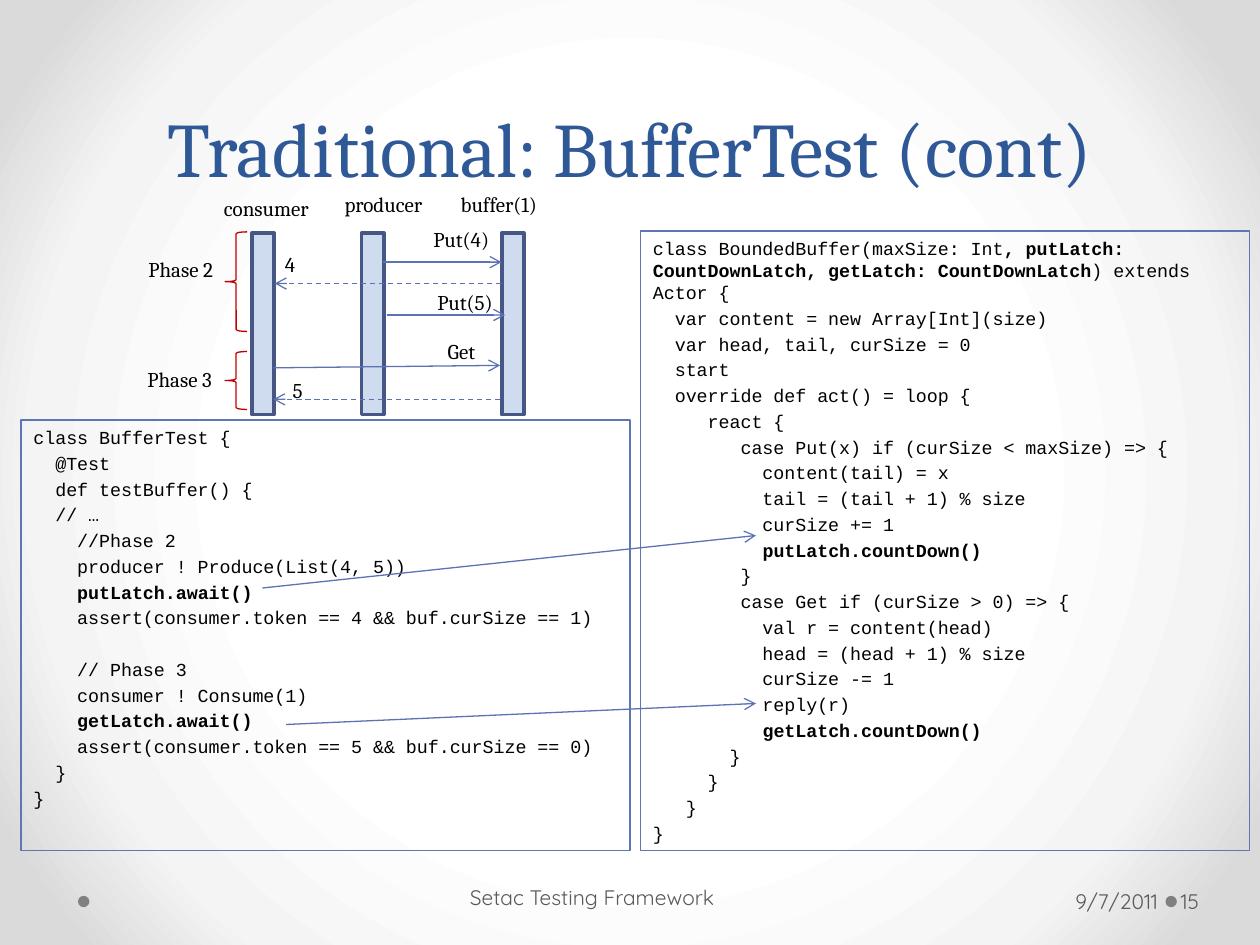
from lxml import etree
from pptx import Presentation
from pptx.dml.color import RGBColor
from pptx.enum import dml, shapes, text
from pptx.oxml import ns
from pptx.util import Pt

SERIF, MONO, SANS = "Cambria", "Courier New", "Quicksand"
BLUE, ARROW, GREY = "6076B4", "5C72B2", "595959"
LEFT, CENTER, RIGHT = text.PP_ALIGN.LEFT, text.PP_ALIGN.CENTER, text.PP_ALIGN.RIGHT

# Text between ** marks is bold
TEST_CODE = """class BufferTest {
  @Test
  def testBuffer() {
  // …
    //Phase 2
    producer ! Produce(List(4, 5))
    **putLatch.await()**
    assert(consumer.token == 4 && buf.curSize == 1)

    // Phase 3
    consumer ! Consume(1)
    **getLatch.await()**
    assert(consumer.token == 5 && buf.curSize == 0)
  }
}"""
BUFFER_CODE = """class BoundedBuffer(maxSize: Int**, putLatch: CountDownLatch, getLatch: CountDownLatch**) extends Actor {
  var content = new Array[Int](size)
  var head, tail, curSize = 0
  start
  override def act() = loop {
     react {
        case Put(x) if (curSize < maxSize) => {
          content(tail) = x
          tail = (tail + 1) % size
          curSize += 1
          **putLatch.countDown()**
        }
        case Get if (curSize > 0) => {
          val r = content(head)
          head = (head + 1) % size
          curSize -= 1
          reply(r)
          **getLatch.countDown()**
       }
     }
   }
}"""


def color(value):
    return RGBColor.from_string(value)


def add_xml(parent, tag, **attributes):
    return etree.SubElement(parent, ns.qn(tag), attributes)


def add_shape(slide, kind, box, fill=None, line=None, width=0.75):
    shape = slide.shapes.add_shape(kind, *map(Pt, box))
    shape.shadow.inherit = False
    if fill:
        shape.fill.solid()
        shape.fill.fore_color.rgb = color(fill)
    else:
        shape.fill.background()
    if line:
        shape.line.color.rgb = color(line)
        shape.line.width = Pt(width)
    else:
        shape.line.fill.background()
    return shape


def write(frame, content, font=SERIF, size=12, fill="000000", align=LEFT,
          anchor=text.MSO_ANCHOR.TOP, before=0, line_spacing=None):
    """Write one paragraph per line; an empty line widens the next gap."""
    frame.word_wrap = True
    frame.vertical_anchor = anchor
    paragraph, gap = None, 0
    for line in content.split("\n"):
        if not line:
            gap += before + line_spacing
            continue
        if paragraph is None:
            paragraph = frame.paragraphs[0]
        else:
            paragraph = frame.add_paragraph()
            paragraph.space_before = Pt(before + gap)
        gap = 0
        paragraph.alignment = align
        if line_spacing:
            paragraph.line_spacing = Pt(line_spacing)
        for index, part in enumerate(line.split("**")):
            if part:
                run = paragraph.add_run()
                run.text = part
                run.font.name, run.font.size = font, Pt(size)
                run.font.bold = index % 2 == 1
                run.font.color.rgb = color(fill)


def add_text(slide, box, content, **style):
    frame = slide.shapes.add_textbox(*map(Pt, box)).text_frame
    write(frame, content, **style)
    return frame


def add_arrow(slide, start, end, dashed=False):
    line = slide.shapes.add_connector(
        shapes.MSO_CONNECTOR.STRAIGHT, *map(Pt, (*start, *end)))
    line.line.color.rgb = color(ARROW)
    line.line.width = Pt(0.75)
    if dashed:
        line.line.dash_style = dml.MSO_LINE.DASH
    add_xml(line.line._get_or_add_ln(), "a:tailEnd", type="arrow")
    add_xml(line._element.spPr, "a:effectLst")


def paint_background(slide):
    slide.background.fill.gradient()
    gradient = slide.element.find(".//" + ns.qn("a:gradFill"))
    for child in list(gradient):
        gradient.remove(child)
    stops = add_xml(gradient, "a:gsLst")
    for position, value in ((50, "FFFFFF"), (76, "F4F4F4"), (92, "DADADA")):
        stop = add_xml(stops, "a:gs", pos=str(position * 1000))
        add_xml(stop, "a:srgbClr", val=value)
    circle = add_xml(gradient, "a:path", path="circle")
    add_xml(circle, "a:fillToRect", l="50000", t="50000", r="50000", b="50000")


def add_code(slide, box, code):
    panel = add_shape(slide, shapes.MSO_SHAPE.RECTANGLE, box, line=BLUE)
    write(panel.text_frame, code, font=MONO, size=10.5, before=2.1, line_spacing=12.6)


def add_sequence(slide, left, top):
    # Lifelines
    for x in (88, 150.6, 230.6):
        add_shape(slide, shapes.MSO_SHAPE.RECTANGLE, (left + x, top + 28.2, 12.6, 103.7),
                  "CFDCF0", "475785", 2.25)
    # Phase braces
    for y, height in ((27.5, 56.9), (95.9, 33.1)):
        add_shape(slide, shapes.MSO_SHAPE.LEFT_BRACE, (left + 72.6, top + y, 12.6, height),
                  line="C00000")
    # Messages
    for x1, y1, x2, y2, dashed in (
            (162.9, 44.8, 230.6, 44.8, False), (230.6, 57, 101, 57, True),
            (165, 75, 232.7, 75, False), (100.2, 105.2, 229.8, 103.8, False),
            (229.8, 123.2, 100.2, 123.2, True)):
        add_arrow(slide, (left + x1, top + y1), (left + x2, top + y2), dashed)
    # Labels, placed by their right edge
    for label, right, y, width in (
            ("Phase 2", 72.9, 38.3, 72), ("Phase 3", 72.2, 101, 72),
            ("consumer", 127.6, 3, 86), ("producer", 192.4, 0.8, 72),
            ("buffer(1)", 258, 0.8, 72), ("Put(4)", 230.6, 21, 72),
            ("Put(5)", 232.7, 57, 55), ("Get", 222.6, 85, 72),
            ("4", 119.7, 35.4, 26), ("5", 124, 107.4, 26)):
        add_text(slide, (left + right - width, top + y, width, 21.8), label, align=RIGHT)


def add_footer(slide, top):
    for x in (44.6, 666):
        add_shape(slide, shapes.MSO_SHAPE.OVAL, (x, top + 13.7, 6.5, 6.5), "808080")
    for x, y, width, content, align, inset_left, inset_right in (
            (501.1, 2.2, 164.2, "9/7/2011", RIGHT, 7.2, 3.6),
            (228.2, 0, 223.9, "Setac Testing Framework", CENTER, 3.6, 7.2),
            (672.5, 2.2, 43.9, "15", LEFT, 2.2, 3.6)):
        frame = add_text(slide, (x, top + y, width, 28.8), content, font=SANS, fill=GREY,
                         align=align, anchor=text.MSO_ANCHOR.MIDDLE)
        frame.margin_left, frame.margin_right = Pt(inset_left), Pt(inset_right)


def main():
    presentation = Presentation()
    presentation.slide_width, presentation.slide_height = Pt(720), Pt(540)
    slide = presentation.slides.add_slide(presentation.slide_layouts[6])
    paint_background(slide)
    # Title
    add_text(slide, (36, 0, 648, 113.8), "Traditional: BufferTest (cont)", size=44,
             fill="2F5897", align=CENTER, anchor=text.MSO_ANCHOR.BOTTOM, line_spacing=58)
    # Code panels and the links between their latches
    add_code(slide, (12, 240, 348, 246), TEST_CODE)
    add_code(slide, (366, 132, 348, 354), BUFFER_CODE)
    add_arrow(slide, (150, 336), (432, 306))
    add_arrow(slide, (163.5, 414), (432, 402))
    add_sequence(slide, 56, 105)
    add_footer(slide, 498.2)
    presentation.save("out.pptx")


if __name__ == "__main__":
    main()
